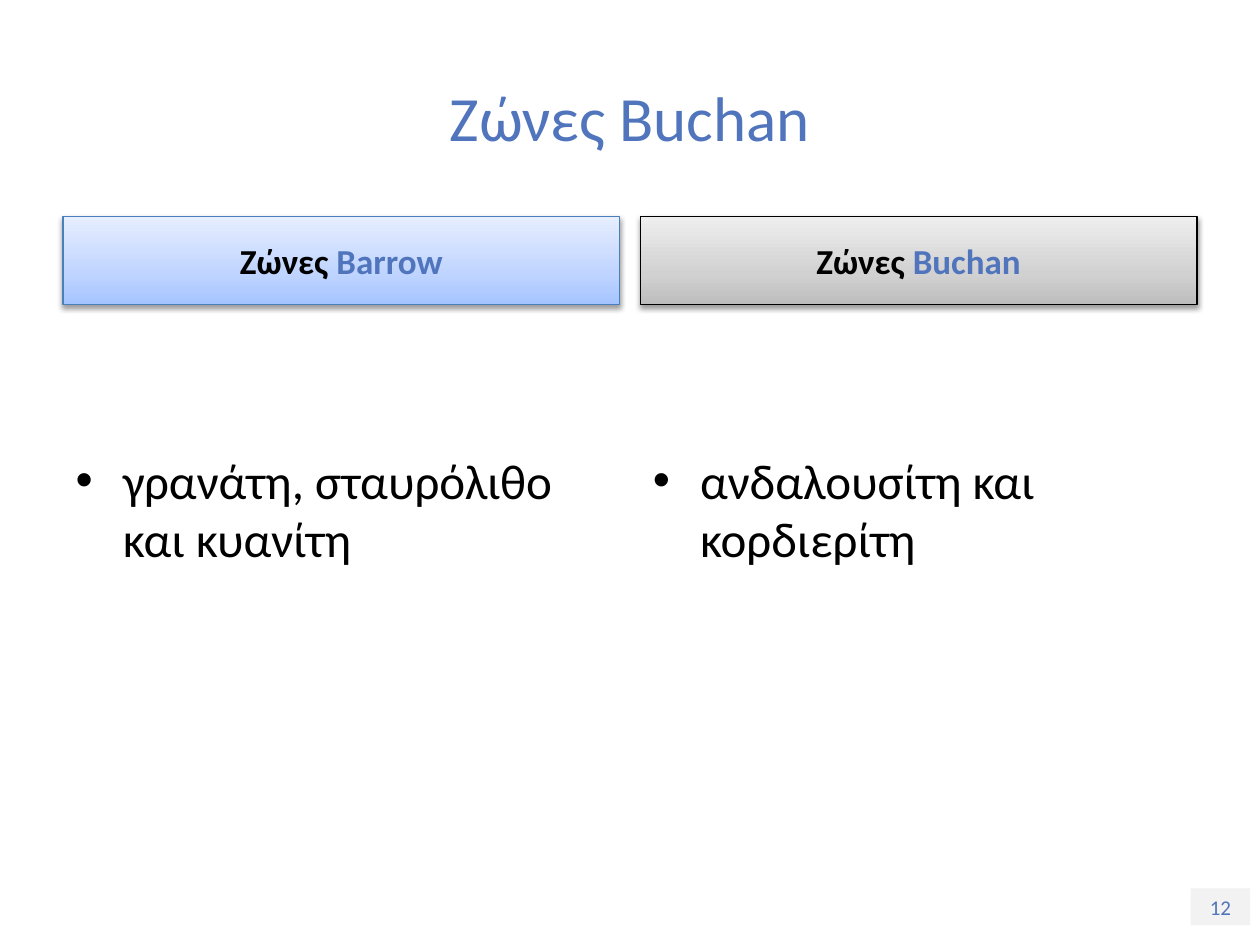
import copy
from dataclasses import dataclass

import pptx
import pptx.dml.color
import pptx.enum.text
import pptx.oxml
import pptx.oxml.ns
import pptx.util

Pt = pptx.util.Pt
ALIGN = pptx.enum.text.PP_ALIGN
ANCHOR = pptx.enum.text.MSO_ANCHOR
qn = pptx.oxml.ns.qn


@dataclass(frozen=True)
class Theme:
    font: str = "Calibri"
    accent: str = "5075BC"
    text: str = "000000"
    number_fill: str = "F2F2F2"
    blue_stops: tuple = ("A4C4FF", "BFD4FF", "E6EEFF")
    blue_line: str = "4B7EBC"
    gray_stops: tuple = ("BDBDBD", "D1D1D1", "EEEEEE")
    gray_line: str = "000000"
    title_size: int = 36
    header_size: int = 20
    list_size: int = 28
    number_size: int = 12


def rgb(value):
    return pptx.dml.color.RGBColor.from_string(value)


class SlideBuilder:
    def __init__(self, slide, theme):
        self.slide = slide
        self.theme = theme

    def place(self, shape, left, top, width, height):
        shape.left, shape.top = Pt(left), Pt(top)
        shape.width, shape.height = Pt(width), Pt(height)

    def format_run(self, run, size, color, bold=False):
        run.font.name = self.theme.font
        run.font.size = Pt(size)
        run.font.bold = bold
        run.font.color.rgb = rgb(color)

    def frame(self, shape, anchor):
        text_frame = shape.text_frame
        text_frame.word_wrap = True
        text_frame.auto_size = pptx.enum.text.MSO_AUTO_SIZE.NONE
        text_frame.vertical_anchor = anchor
        return text_frame

    def title(self, text, *box):
        shape = self.slide.shapes.title
        self.place(shape, *box)
        text_frame = self.frame(shape, ANCHOR.MIDDLE)
        text_frame.text = text
        paragraph = text_frame.paragraphs[0]
        paragraph.alignment = ALIGN.CENTER
        self.format_run(paragraph.runs[0], self.theme.title_size, self.theme.accent)

    def header(self, index, label, name, stops, line_color, *box):
        shape = self.slide.placeholders[index]
        self.place(shape, *box)
        self.gradient(shape, stops)
        shape.line.color.rgb = rgb(line_color)
        shape.line.width = Pt(0.75)
        self.shadow(shape)
        paragraph = self.frame(shape, ANCHOR.MIDDLE).paragraphs[0]
        paragraph.alignment = ALIGN.CENTER
        paragraph.space_before = Pt(0)
        for text, color in ((label, self.theme.text), (name, self.theme.accent)):
            run = paragraph.add_run()
            run.text = text
            self.format_run(run, self.theme.header_size, color, bold=True)

    def gradient(self, shape, stops):
        shape.fill.gradient()
        shape.fill.gradient_angle = 90
        stop_list = shape._element.spPr.find(qn("a:gradFill")).find(qn("a:gsLst"))
        stop_list.append(copy.deepcopy(stop_list[0]))
        for stop, color, position in zip(shape.fill.gradient_stops, stops, (0, 0.35, 1)):
            stop.color.rgb = rgb(color)
            stop.position = position

    def shadow(self, shape):
        shape.shadow.inherit = False
        effects = shape._element.spPr.find(qn("a:effectLst"))
        effects.append(pptx.oxml.parse_xml(
            f'<a:outerShdw {pptx.oxml.ns.nsdecls("a")} blurRad="{Pt(3.1)}" '
            f'dist="{Pt(1.6)}" dir="5400000" rotWithShape="0">'
            '<a:srgbClr val="000000"><a:alpha val="38000"/></a:srgbClr></a:outerShdw>'))

    def bullet_list(self, index, items, top_inset, *box):
        shape = self.slide.placeholders[index]
        self.place(shape, *box)
        text_frame = self.frame(shape, ANCHOR.TOP)
        text_frame.margin_top = Pt(top_inset)
        text_frame.text = "\n".join(items)
        for number, paragraph in enumerate(text_frame.paragraphs):
            properties = paragraph._p.get_or_add_pPr()
            properties.set("marL", str(Pt(27)))
            properties.set("indent", str(Pt(-27)))
            properties.append(pptx.oxml.parse_xml(
                f'<a:buChar {pptx.oxml.ns.nsdecls("a")} char="•"/>'))
            paragraph.space_before = Pt(5.6 if number else 0)
            self.format_run(paragraph.runs[0], self.theme.list_size, self.theme.text)

    def page_number(self, text, *box):
        shape = self.slide.shapes.add_textbox(*(Pt(length) for length in box))
        shape.fill.solid()
        shape.fill.fore_color.rgb = rgb(self.theme.number_fill)
        text_frame = self.frame(shape, ANCHOR.MIDDLE)
        text_frame.text = text
        paragraph = text_frame.paragraphs[0]
        paragraph.alignment = ALIGN.CENTER
        self.format_run(paragraph.runs[0], self.theme.number_size, self.theme.accent)


def main():
    presentation = pptx.Presentation()
    presentation.slide_width, presentation.slide_height = Pt(720), Pt(540)
    slide = presentation.slides.add_slide(presentation.slide_layouts[4])
    theme = Theme()
    builder = SlideBuilder(slide, theme)

    # Title
    builder.title("Ζώνες Buchan", 36, 21.6, 648, 90)

    # Two columns: a header above a list
    columns = (
        ("Barrow", theme.blue_stops, theme.blue_line, "γρανάτη, σταυρόλιθο και κυανίτη"),
        ("Buchan", theme.gray_stops, theme.gray_line, "ανδαλουσίτη και κορδιερίτη"),
    )
    margin, gap, header_top, header_height = 36, 11.6, 123.9, 50.3
    width = (720 - 2 * margin - gap) / 2
    for column, (name, stops, line_color, item) in enumerate(columns):
        left = margin + column * (width + gap)
        builder.header(1 + 2 * column, "Ζώνες ", name, stops, line_color,
                       left, header_top, width, header_height)
        builder.bullet_list(2 + 2 * column, [item], 83,
                            left, header_top + header_height, width, 305.3)

    # Page number
    builder.page_number("12", 680.4, 507.6, 34, 21)

    presentation.save("out.pptx")


if __name__ == "__main__":
    main()
